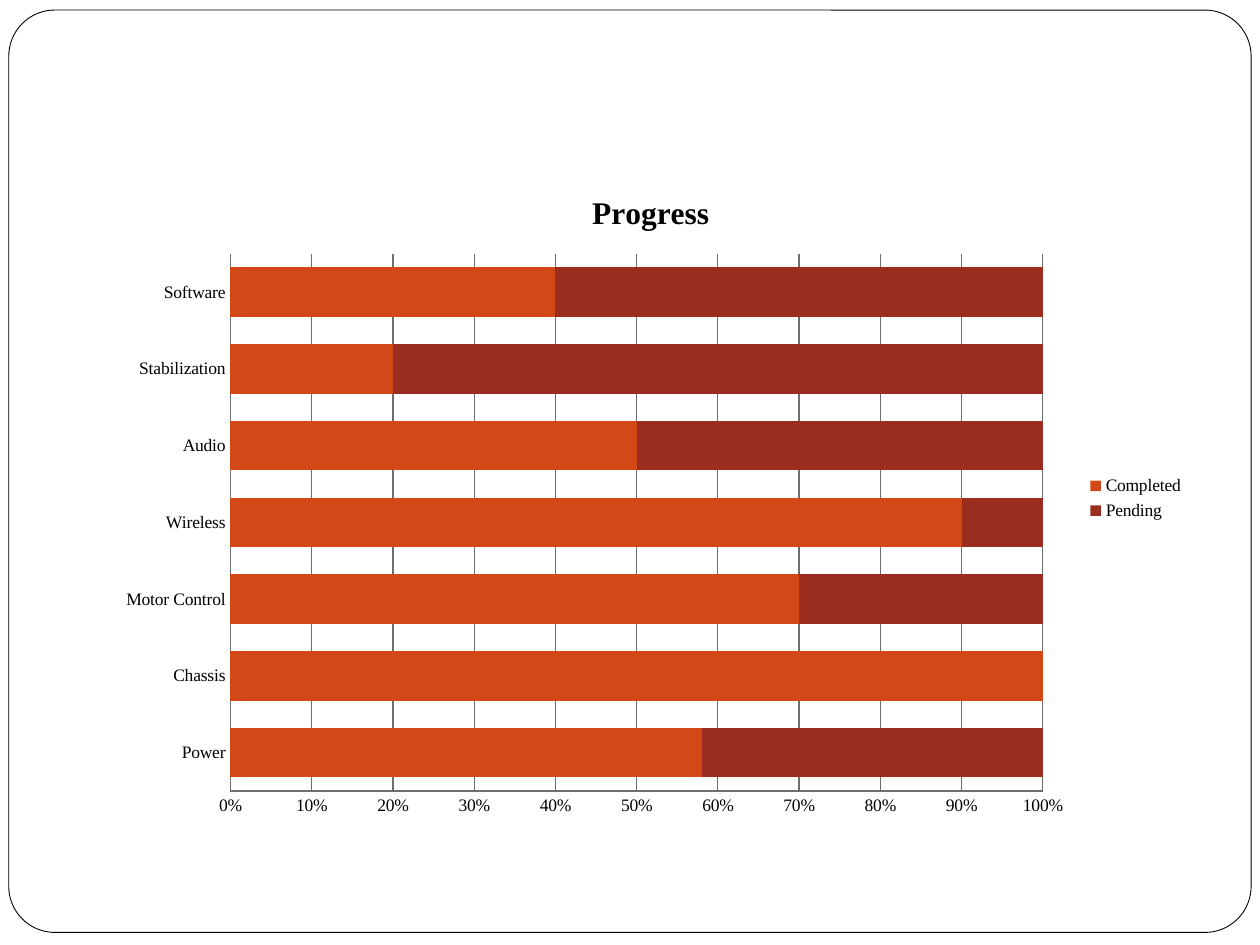
from pptx import Presentation
from pptx.chart.data import CategoryChartData
from pptx.dml.color import RGBColor
from pptx.enum.chart import XL_CHART_TYPE, XL_LEGEND_POSITION, XL_TICK_MARK
from pptx.enum.shapes import MSO_SHAPE
from pptx.util import Inches, Pt

COLORS = {
    "paper": "FFFFFF",
    "ink": "000000",
    "grid": "6E6E6E",
    "Completed": "D34817",
    "Pending": "9B2D1F",
}
COMPLETED = {
    "Power": 58,
    "Chassis": 100,
    "Motor Control": 70,
    "Wireless": 90,
    "Audio": 50,
    "Stabilization": 20,
    "Software": 40,
}


def color(name):
    return RGBColor.from_string(COLORS[name])


def set_font(font, size, bold=False):
    values = {"name": "Times New Roman", "size": Pt(size), "bold": bold}
    for attribute, value in values.items():
        setattr(font, attribute, value)
    font.color.rgb = color("ink")


deck = Presentation()
deck.slide_width, deck.slide_height = Inches(10), Inches(7.5)
page = deck.slides.add_slide(deck.slide_layouts[6])

# Rounded page frame
frame = page.shapes.add_shape(
    MSO_SHAPE.ROUNDED_RECTANGLE, Inches(0.07), Inches(0.08), Inches(9.86), Inches(7.32)
)
frame.adjustments[0] = 0.05
frame.shadow.inherit = False
frame.fill.solid()
frame.fill.fore_color.rgb = color("paper")
frame.line.color.rgb = color("ink")
frame.line.width = Pt(0.5)

# Progress chart
data = CategoryChartData()
data.categories = list(COMPLETED)
data.add_series("Completed", list(COMPLETED.values()))
data.add_series("Pending", [100 - share for share in COMPLETED.values()])
chart = page.shapes.add_chart(
    XL_CHART_TYPE.BAR_STACKED_100,
    Inches(0.83), Inches(1.33), Inches(8.67), Inches(5.25), data,
).chart
set_font(chart.font, 10)

chart.has_title = True
title = chart.chart_title.text_frame
title.text = "Progress"
set_font(title.paragraphs[0].runs[0].font, 18, bold=True)

chart.has_legend = True
chart.legend.position = XL_LEGEND_POSITION.RIGHT
chart.legend.include_in_layout = False

plot = chart.plots[0]
plot.gap_width = 55
plot.overlap = 100
plot.vary_by_categories = False
for series in plot.series:
    series.format.fill.solid()
    series.format.fill.fore_color.rgb = color(series.name)

for axis in (chart.category_axis, chart.value_axis):
    axis.major_tick_mark = XL_TICK_MARK.NONE
    axis.minor_tick_mark = XL_TICK_MARK.NONE
    axis.format.line.color.rgb = color("grid")
    axis.format.line.width = Pt(0.75)

shares = chart.value_axis
shares.has_major_gridlines = True
shares.major_gridlines.format.line.color.rgb = color("grid")
shares.major_gridlines.format.line.width = Pt(0.75)
shares.tick_labels.number_format = "0%"
shares.tick_labels.number_format_is_linked = False

deck.save("out.pptx")
